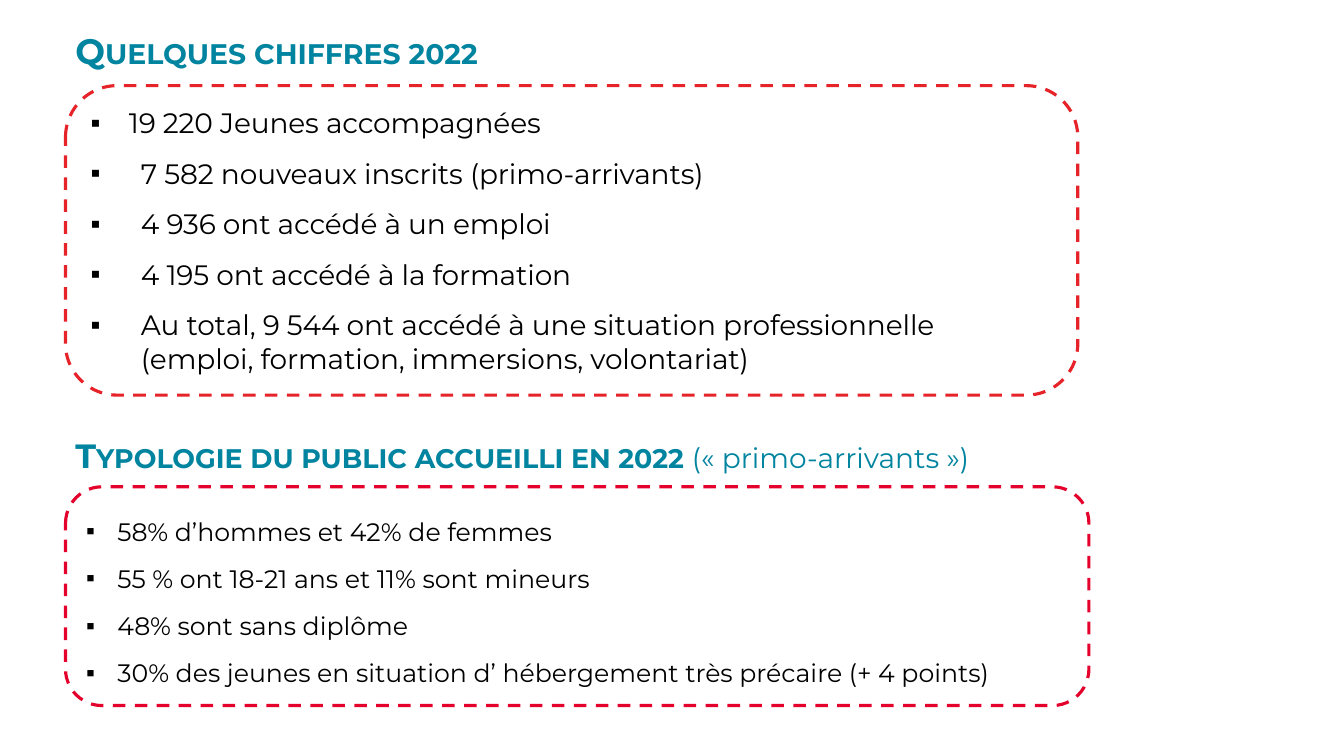
from dataclasses import dataclass

from lxml.etree import SubElement
from pptx import Presentation
from pptx.dml.color import RGBColor
from pptx.enum.dml import MSO_LINE
from pptx.enum.shapes import MSO_SHAPE
from pptx.enum.text import MSO_ANCHOR, PP_ALIGN
from pptx.oxml.ns import qn
from pptx.util import Inches, Pt


@dataclass
class Theme:
    font: str = "Montserrat"
    teal: str = "00849F"
    black: str = "000000"
    white: str = "FFFFFF"
    red: str = "E52329"
    rose: str = "E4022C"
    title: float = 25.2
    head: float = 24
    large: float = 20
    small: float = 18


theme = Theme()


def write(para, text, size, color, bold=False, caps=False, track=0):
    """Add a formatted run to a paragraph."""
    run = para.add_run()
    run.text = text
    font = run.font
    font.name, font.size, font.bold = theme.font, Pt(size), bold
    font.color.rgb = RGBColor.from_string(color)
    props = run._r.get_or_add_rPr()
    if caps:
        props.set("cap", "small")
    if track:
        props.set("spc", str(track))


def bullet(para, indent):
    """Give a paragraph a square bullet with a hanging indent."""
    props = para._p.get_or_add_pPr()
    props.set("marL", str(Inches(indent)))
    props.set("indent", str(-Inches(indent)))
    SubElement(props, qn("a:buFont")).set("typeface", "Arial")
    SubElement(props, qn("a:buChar")).set("char", "▪")


deck = Presentation()
deck.slide_width, deck.slide_height = Inches(13.33), Inches(7.5)
slide = deck.slides.add_slide(deck.slide_layouts[6])
left = Inches(0.65)

# Headings: top, width, then runs of (text, size, strong)
heads = [
    (0.15, 4.67, [("Quelques chiffres 2022", theme.title, True)]),
    (4.16, 11.35, [("Typologie du public accueilli en 2022 ", theme.head, True),
                   ("(« primo-arrivants »)", theme.large, False)]),
]
for top, width, runs in heads:
    box = slide.shapes.add_textbox(left, Inches(top), Inches(width), Inches(0.76))
    frame = box.text_frame
    frame.word_wrap = True
    frame.vertical_anchor = MSO_ANCHOR.MIDDLE
    para = frame.paragraphs[0]
    para.line_spacing = 0.9
    for text, size, strong in runs:
        write(para, text, size, theme.teal, bold=strong, caps=strong)

# Dashed panels: top, width, height, line, size, tracking, top inset, (indent, text)
panels = [
    (0.85, 10.04, 3.07, theme.red, theme.large, -10, 0.05, [
        (0.38, "19 220 Jeunes accompagnées"),
        (0.5, "7 582 nouveaux inscrits (primo-arrivants)"),
        (0.5, "4 936 ont accédé à un emploi"),
        (0.5, "4 195 ont accédé à la formation"),
        (0.5, "Au total, 9 544 ont accédé à une situation professionnelle "
              "(emploi, formation, immersions, volontariat)"),
    ]),
    (4.83, 10.15, 2.17, theme.rose, theme.small, 0, 0.16, [
        (0.31, "58% d’hommes et 42% de femmes"),
        (0.31, "55 % ont 18-21 ans et 11% sont mineurs"),
        (0.31, "48% sont sans diplôme"),
        (0.31, "30% des jeunes en situation d’ hébergement très précaire (+ 4 points)"),
    ]),
]
for top, width, height, color, size, track, inset, items in panels:
    panel = slide.shapes.add_shape(MSO_SHAPE.ROUNDED_RECTANGLE, left, Inches(top),
                                   Inches(width), Inches(height))
    panel.shadow.inherit = False
    panel.fill.solid()
    panel.fill.fore_color.rgb = RGBColor.from_string(theme.white)
    panel.line.color.rgb = RGBColor.from_string(color)
    panel.line.width = Pt(2.25)
    panel.line.dash_style = MSO_LINE.DASH
    frame = panel.text_frame
    frame.word_wrap = True
    frame.vertical_anchor = MSO_ANCHOR.MIDDLE
    frame.margin_top = Inches(inset)
    for rank, (indent, text) in enumerate(items):
        para = frame.add_paragraph() if rank else frame.paragraphs[0]
        bullet(para, indent)
        para.alignment = PP_ALIGN.LEFT
        para.space_before = Pt(6 if rank else 0)
        para.space_after = Pt(6 if rank < len(items) - 1 else 0)
        write(para, text, size, theme.black, track=track)

deck.save("out.pptx")
